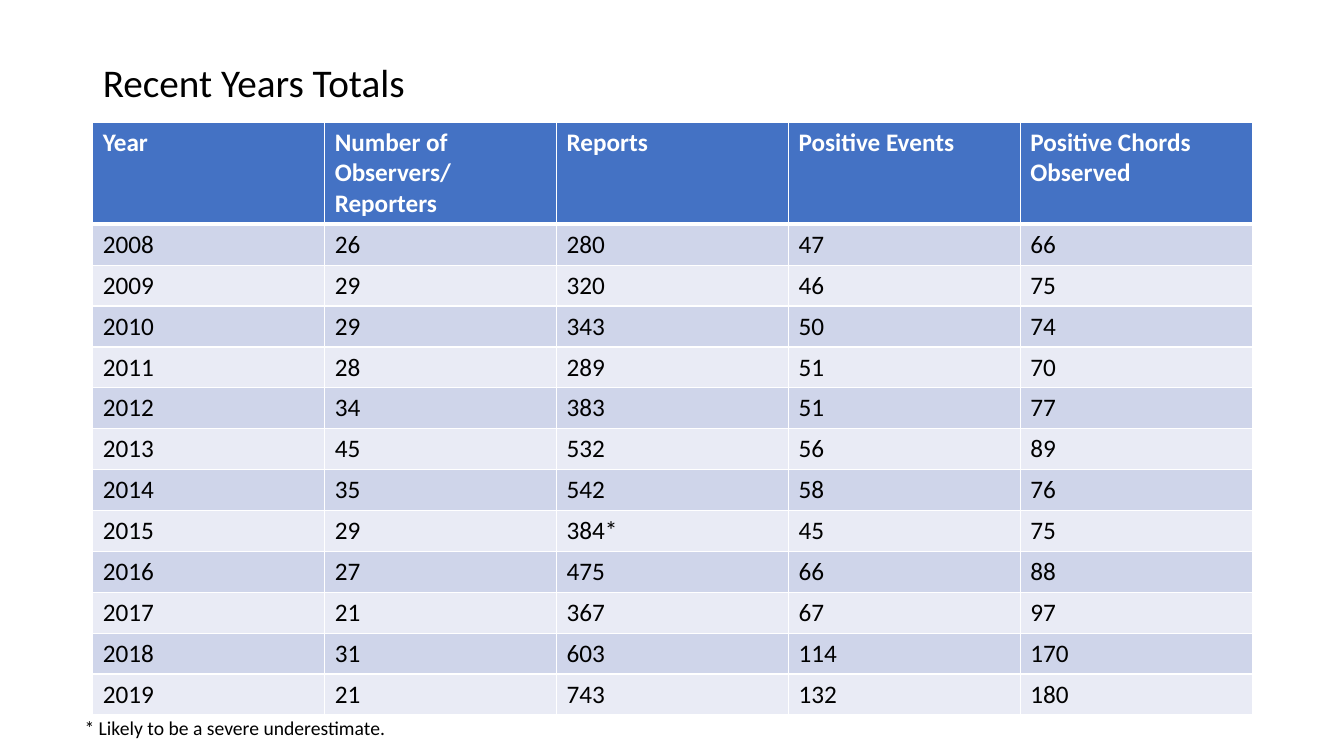
from lxml import etree
from pptx import Presentation
from pptx import util as u
from pptx.dml.color import RGBColor
from pptx.enum import text
from pptx.oxml import ns

HEADINGS = ["Year", "Number of Observers/ Reporters", "Reports",
            "Positive Events", "Positive Chords Observed"]
YEARLY_TOTALS = [
    (2008, 26, 280, 47, 66),
    (2009, 29, 320, 46, 75),
    (2010, 29, 343, 50, 74),
    (2011, 28, 289, 51, 70),
    (2012, 34, 383, 51, 77),
    (2013, 45, 532, 56, 89),
    (2014, 35, 542, 58, 76),
    (2015, 29, "384*", 45, 75),
    (2016, 27, 475, 66, 88),
    (2017, 21, 367, 67, 97),
    (2018, 31, 603, 114, 170),
    (2019, 21, 743, 132, 180),
]


def color(hex_value):
    return RGBColor.from_string(hex_value)


def set_attributes(target, values):
    for name, value in values.items():
        setattr(target, name, value)


class TotalsSlide:
    font_name = "Calibri"
    black, white = "000000", "FFFFFF"
    header_fill = "4472C4"
    band_fills = ("CFD5EA", "E9EBF5")

    def __init__(self, presentation):
        title_only = presentation.slide_layouts[5]
        self.slide = presentation.slides.add_slide(title_only)

    def place(self, shape, left, top, width, height):
        box = dict(left=left, top=top, width=width, height=height)
        set_attributes(shape, {side: u.Inches(size) for side, size in box.items()})

    def add_words(self, frame, words, size, font_color=black, bold=False):
        paragraph = frame.paragraphs[0]
        paragraph.alignment = text.PP_ALIGN.LEFT
        run = paragraph.add_run()
        run.text = str(words)
        set_attributes(run.font, dict(name=self.font_name, size=u.Pt(size), bold=bold))
        run.font.color.rgb = color(font_color)
        return paragraph

    def title(self, words, *box):
        shape = self.slide.shapes.title
        self.place(shape, *box)
        set_attributes(shape.text_frame, dict(
            vertical_anchor=text.MSO_ANCHOR.MIDDLE, word_wrap=True))
        self.add_words(shape.text_frame, words, 28).line_spacing = 0.9

    def note(self, words, *box):
        shape = self.slide.shapes.add_textbox(*map(u.Inches, box))
        set_attributes(shape.text_frame, dict(
            word_wrap=True, auto_size=text.MSO_AUTO_SIZE.SHAPE_TO_FIT_TEXT))
        self.add_words(shape.text_frame, words, 14)

    def borders(self, cell, **widths):
        """Draw white cell borders; widths are points keyed by side, L R T B."""
        properties = cell._tc.get_or_add_tcPr()
        for side, width in widths.items():
            line = etree.SubElement(properties, ns.qn(f"a:ln{side}"), w=str(u.Pt(width)))
            fill = etree.SubElement(line, ns.qn("a:solidFill"))
            etree.SubElement(fill, ns.qn("a:srgbClr"), val=self.white)

    def table(self, rows, left, top, width, header_height, row_height):
        height = header_height + row_height * (len(rows) - 1)
        frame = self.slide.shapes.add_table(
            len(rows), len(rows[0]), *map(u.Inches, (left, top, width, height)))
        table = frame.table
        for row_index, values in enumerate(rows):
            header = row_index == 0
            table.rows[row_index].height = u.Inches(header_height if header else row_height)
            fill = self.header_fill if header else self.band_fills[(row_index - 1) % 2]
            for column_index, value in enumerate(values):
                cell = table.cell(row_index, column_index)
                self.borders(cell, L=1, R=1, T=3 if row_index == 1 else 1,
                             B=3 if header else 1)
                cell.fill.solid()
                cell.fill.fore_color.rgb = color(fill)
                self.add_words(cell.text_frame, value, 18,
                               self.white if header else self.black, header)


def main():
    presentation = Presentation()
    set_attributes(presentation, dict(
        slide_width=u.Inches(13.33), slide_height=u.Inches(7.5)))
    totals = TotalsSlide(presentation)
    totals.title("Recent Years Totals", 0.92, 0.4, 11.5, 0.88)
    totals.table([HEADINGS, *YEARLY_TOTALS], 0.92, 1.21, 11.5, 0.93, 0.39)
    totals.note("* Likely to be a severe underestimate.", 0.74, 7.05, 4.59, 0.34)
    presentation.save("out.pptx")


if __name__ == "__main__":
    main()
